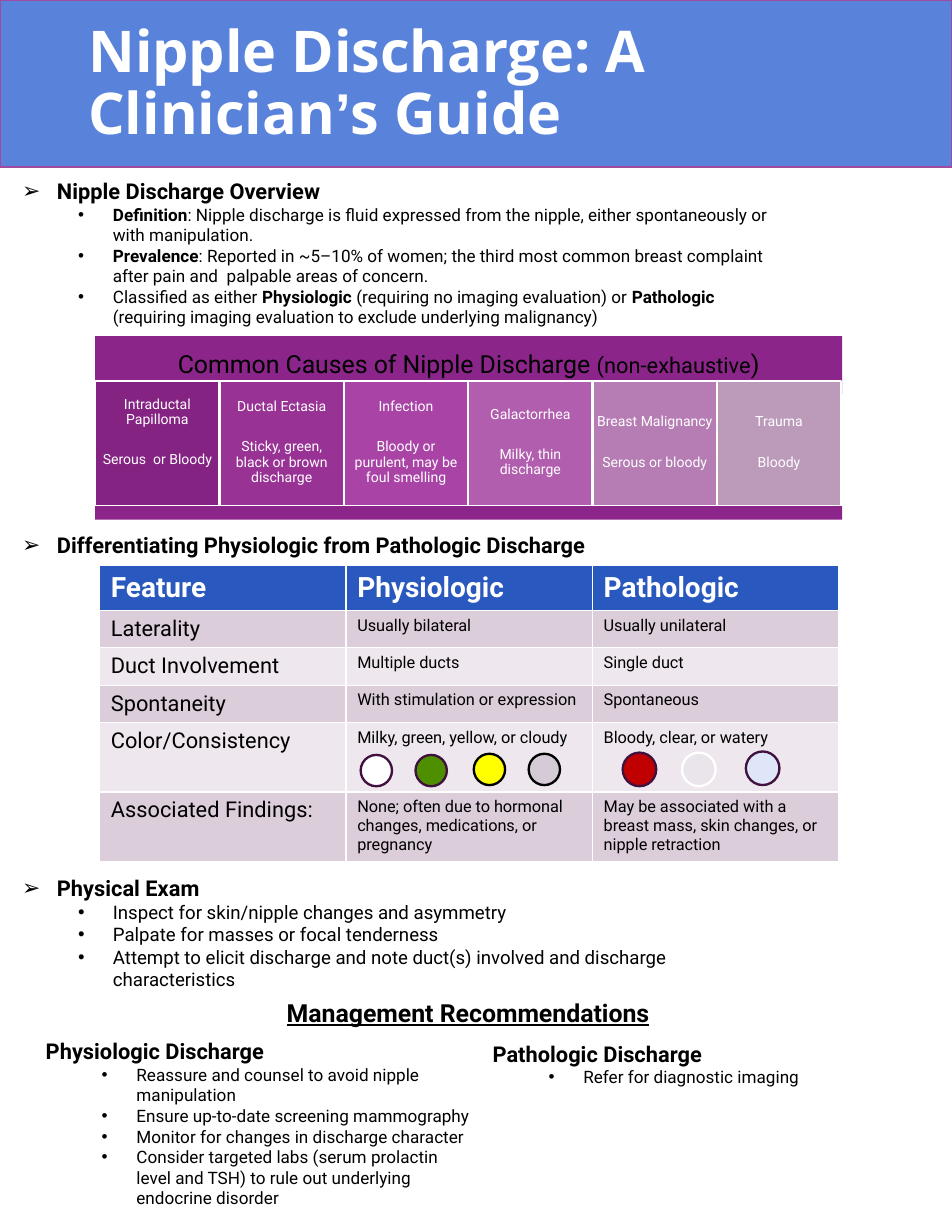
"""Build a one-page clinician's guide to nipple discharge."""
from dataclasses import dataclass

from lxml.etree import SubElement
from pptx import Presentation
from pptx.dml.color import RGBColor
from pptx.enum.shapes import MSO_SHAPE
from pptx.enum.text import MSO_ANCHOR, PP_ALIGN
from pptx.oxml.ns import qn
from pptx.util import Inches, Pt

BLACK, WHITE, PURPLE, PLUM = "000000", "FFFFFF", "8B2589", "40113F"


@dataclass
class Run:
    text: str
    size: float
    bold: bool = False
    color: str = BLACK
    font: str = "Roboto"
    underline: bool = False


@dataclass
class Line:
    runs: list[Run]
    bullet: str = ""
    level: int = 0
    centered: bool = False
    spacing: float | None = None
    space_after: float | None = None


@dataclass
class Cause:
    name: str
    discharge: str
    fill: str
    bottom_inset: float = 0.06


@dataclass
class Swatch:
    left: float
    top: float
    size: float
    fill: str
    outline: str


def rgb(color: str) -> RGBColor:
    return RGBColor.from_string(color)


def heading(text: str, bullet: str = "➢") -> Line:
    return Line([Run(text, 14, True)], bullet)


def item(size: float, *parts: str) -> Line:
    """Make a bulleted line; parts that start with an asterisk are bold."""
    runs = [Run(part.lstrip("*"), size, part.startswith("*")) for part in parts]
    return Line(runs, "•", 1)


def write(text_frame, lines: list[Line]) -> None:
    text_frame.word_wrap = True
    for index, line in enumerate(lines):
        paragraph = text_frame.add_paragraph() if index else text_frame.paragraphs[0]
        paragraph.level = line.level
        paragraph.alignment = PP_ALIGN.CENTER if line.centered else PP_ALIGN.LEFT
        if line.spacing is not None:
            paragraph.line_spacing = line.spacing
        if line.space_after is not None:
            paragraph.space_after = Pt(line.space_after)
        if line.bullet:
            properties = paragraph._p.get_or_add_pPr()
            properties.set("marL", str(Inches(0.81 if line.level else 0.31)))
            properties.set("indent", str(Inches(-0.31)))
            SubElement(properties, qn("a:buFont"), typeface="Arial")
            SubElement(properties, qn("a:buChar"), char=line.bullet)
        for part in line.runs:
            run = paragraph.add_run()
            run.text = part.text
            run.font.size = Pt(part.size)
            run.font.name = part.font
            run.font.bold = part.bold
            run.font.underline = part.underline
            run.font.color.rgb = rgb(part.color)


def add_text(slide, left: float, top: float, width: float, height: float,
             lines: list[Line]) -> None:
    box = slide.shapes.add_textbox(Inches(left), Inches(top), Inches(width), Inches(height))
    write(box.text_frame, lines)


def add_block(slide, left: float, top: float, width: float, height: float, fill: str,
              outline: str = "", preset: MSO_SHAPE = MSO_SHAPE.RECTANGLE):
    shape = slide.shapes.add_shape(preset, Inches(left), Inches(top),
                                   Inches(width), Inches(height))
    shape.shadow.inherit = False
    shape.fill.solid()
    shape.fill.fore_color.rgb = rgb(fill)
    if outline:
        shape.line.color.rgb = rgb(outline)
        shape.line.width = Pt(1.5)
    else:
        shape.line.fill.background()
    return shape


def fill_block(shape, lines: list[Line], inset: float, bottom_inset: float) -> None:
    frame = shape.text_frame
    frame.margin_left = frame.margin_right = frame.margin_top = Inches(inset)
    frame.margin_bottom = Inches(bottom_inset)
    frame.vertical_anchor = MSO_ANCHOR.MIDDLE
    write(frame, lines)


def add_causes(slide, causes: list[Cause]) -> None:
    left, width, tile = 0.85, 6.67, 1.11
    banner = add_block(slide, left, 3, width, 0.52, PURPLE)
    title = [Run("Common Causes of Nipple Discharge ", 16), Run("(non-exhaustive", 14),
             Run(")", 16)]
    fill_block(banner, [Line(title, centered=True, spacing=0.9)], 0.07, 0.07)
    for index, cause in enumerate(causes):
        shape = add_block(slide, left + index * tile, 3.4, tile, 1.12, cause.fill, WHITE)
        lines = [Line([Run(text, 9, color=WHITE)], centered=True, spacing=0.9, space_after=after)
                 for text, after in ((cause.name, 16), (cause.discharge, 0))]
        fill_block(shape, lines, 0.04, cause.bottom_inset)
    add_block(slide, left, 4.52, width, 0.12, PURPLE)


def add_features(slide, rows: list[tuple[str, str, str]], heights: list[float]) -> None:
    table = slide.shapes.add_table(len(rows), 3, Inches(0.89), Inches(5.05),
                                   Inches(6.6), Inches(sum(heights))).table
    for row_index, (texts, height) in enumerate(zip(rows, heights)):
        table.rows[row_index].height = Inches(height)
        for column_index, text in enumerate(texts):
            cell = table.cell(row_index, column_index)
            cell.fill.solid()
            if row_index == 0:
                fill, run = "2958BE", Run(text, 18, True, WHITE)
            else:
                fill = "DCCDDB" if row_index % 2 else "EEE8EE"
                run = Run(text, 10.5 if column_index else 14)
            cell.fill.fore_color.rgb = rgb(fill)
            write(cell.text_frame, [Line([run])])


CAUSES = [
    Cause("Intraductal Papilloma", "Serous  or Bloody", "852382", 0.24),
    Cause("Ductal Ectasia", "Sticky, green, black or brown discharge", "983295"),
    Cause("Infection", "Bloody or purulent, may be foul smelling", "A944A6"),
    Cause("Galactorrhea", "Milky, thin discharge", "B25EAF"),
    Cause("Breast Malignancy", "Serous or bloody", "B57DB3"),
    Cause("Trauma", "Bloody", "BC9ABA"),
]
FEATURES = [
    ("Feature", "Physiologic", "Pathologic"),
    ("Laterality", "Usually bilateral", "Usually unilateral"),
    ("Duct Involvement", "Multiple ducts", "Single duct"),
    ("Spontaneity", "With stimulation or expression", "Spontaneous"),
    ("Color/Consistency", "Milky, green, yellow, or cloudy", "Bloody, clear, or watery"),
    ("Associated Findings:", "None; often due to hormonal changes, medications, or pregnancy",
     "May be associated with a breast mass, skin changes, or nipple retraction"),
]
SWATCHES = [
    Swatch(3.22, 6.74, 0.28, WHITE, PLUM), Swatch(3.71, 6.74, 0.28, "4E8F00", PLUM),
    Swatch(4.23, 6.73, 0.28, "FFFF00", BLACK), Swatch(4.72, 6.73, 0.28, "D5CBD7", BLACK),
    Swatch(5.56, 6.72, 0.3, "C00000", PLUM), Swatch(6.09, 6.72, 0.3, "EAE5EB", WHITE),
    Swatch(6.66, 6.71, 0.3, "DEE6F8", PLUM),
]


def main() -> None:
    presentation = Presentation()
    presentation.slide_width, presentation.slide_height = Inches(8.5), Inches(11)
    slide = presentation.slides.add_slide(presentation.slide_layouts[6])
    add_block(slide, 0, 0, 8.5, 1.49, "5982DB", "A14BA0")
    title = [Run(text, 37, True, WHITE, font) for text, font in (
        ("Nipple Discharge: A Clinician", "Open Sans"), ("’", "Arial"), ("s Guide", "Open Sans"))]
    add_text(slide, 0.69, 0.15, 7.22, 1.35, [Line(title, spacing=0.9)])
    add_text(slide, 0.1, 1.54, 7.04, 1.46, [
        heading("Nipple Discharge Overview"),
        item(11, "*Definition", ": Nipple discharge is fluid expressed from the nipple, "
             "either spontaneously or with manipulation."),
        item(11, "*Prevalence", ": Reported in ~5–10% of women; the third most common breast "
             "complaint after pain and  palpable areas of concern."),
        item(11, "Classified as either ", "*Physiologic", " (requiring no imaging evaluation) or ",
             "*Pathologic", " (requiring imaging evaluation to exclude underlying malignancy)")])
    add_text(slide, 0.1, 4.7, 7.59, 0.35,
             [heading("Differentiating Physiologic from Pathologic Discharge")])
    add_features(slide, FEATURES, [0.39, 0.33, 0.33, 0.33, 0.62, 0.62])
    add_text(slide, 0.1, 7.76, 6.82, 1.14, [
        heading("Physical Exam"),
        item(12, "Inspect for skin/nipple changes and asymmetry"),
        item(12, "Palpate for masses or focal tenderness"),
        item(12, "Attempt to elicit discharge and note duct(s) involved and discharge "
             "characteristics")])
    for swatch in SWATCHES:
        add_block(slide, swatch.left, swatch.top, swatch.size, swatch.size,
                  swatch.fill, swatch.outline, MSO_SHAPE.OVAL)
    add_text(slide, 1.91, 8.86, 4.54, 0.37, [
        Line([Run("Management Recommendations", 16, True, underline=True)], centered=True)])
    add_causes(slide, CAUSES)
    add_text(slide, 0.31, 9.22, 3.99, 1.7, [
        heading("Physiologic Discharge", ""),
        item(11, "Reassure and counsel to avoid nipple manipulation"),
        item(11, "Ensure up-to-date screening mammography"),
        item(11, "Monitor for changes in discharge character"),
        item(11, "Consider targeted labs (serum prolactin level and TSH) to rule out "
             "underlying endocrine disorder")])
    add_text(slide, 4.3, 9.24, 3.54, 0.82, [
        heading("Pathologic Discharge", ""), item(11, "Refer for diagnostic imaging")])
    presentation.save("out.pptx")


if __name__ == "__main__":
    main()
